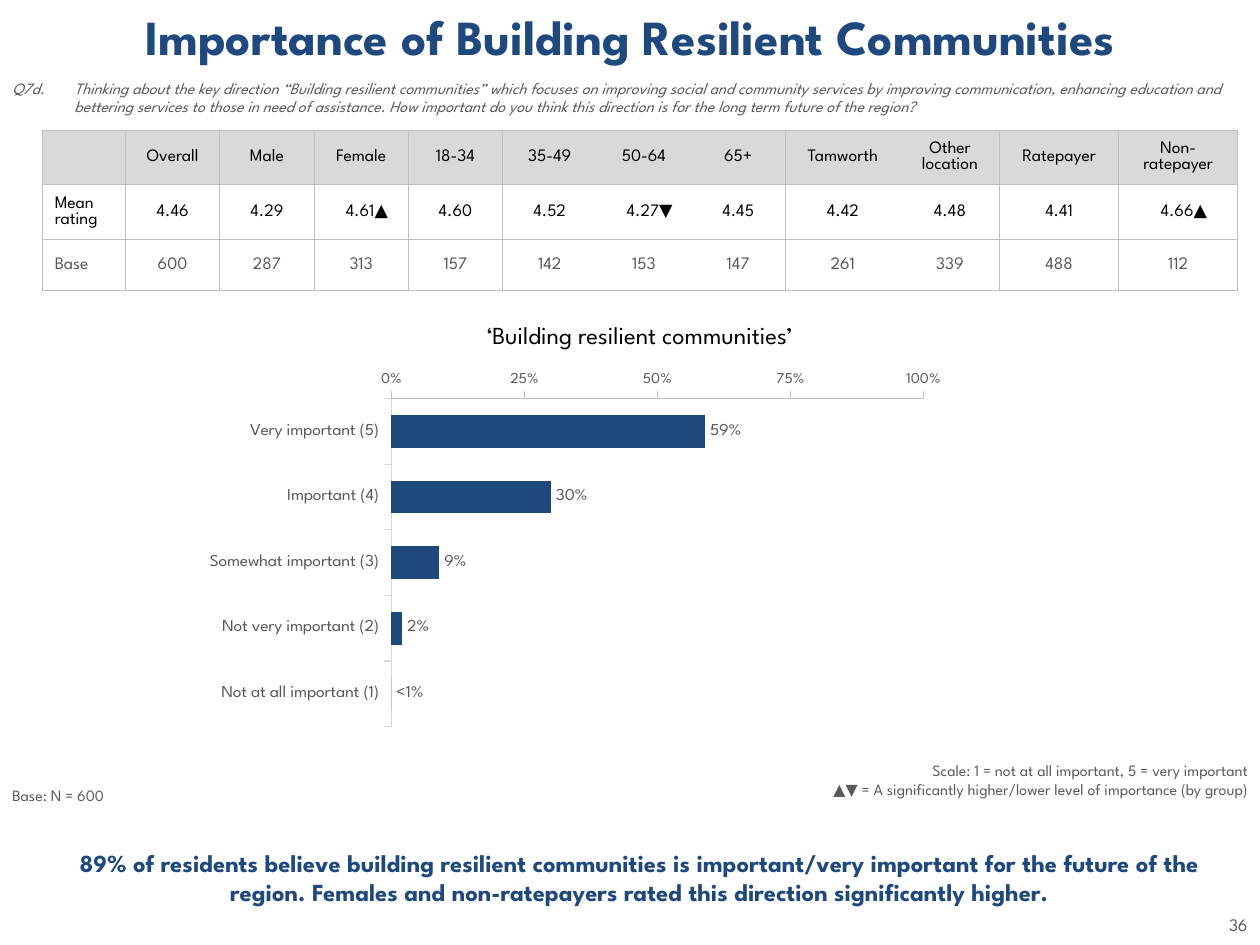
from dataclasses import dataclass
from pptx import Presentation, util as u
from pptx.chart.data import CategoryChartData
from pptx.dml.color import RGBColor
from pptx.enum import chart as ch, text as tx
from pptx.oxml import parse_xml
from pptx.oxml.ns import nsdecls
from lxml import etree

Cm, Pt = u.Cm, u.Pt
LEFT, MID, RIGHT = tx.PP_ALIGN.LEFT, tx.PP_ALIGN.CENTER, tx.PP_ALIGN.RIGHT


@dataclass(frozen=True)
class Theme:
    """Font, colours and type sizes of the slide."""
    face: str = "League Spartan"
    navy: str = "1F497D"
    grey: str = "595959"
    black: str = "000000"
    head: str = "D9D9D9"
    rule: str = "BFBFBF"
    title: int = 28
    lead: int = 14
    body: int = 10
    note: int = 9


T = Theme()
HEADS = ["", "Overall", "Male", "Female", "18-34", "35-49", "50-64", "65+",
         "Tamworth", "Other location", "Ratepayer", "Non-ratepayer"]
MEANS = ["Mean rating", "4.46", "4.29", "4.61▲", "4.60", "4.52", "4.27▼", "4.45",
         "4.42", "4.48", "4.41", "4.66▲"]
BASES = ["Base", "600", "287", "313", "157", "142", "153", "147",
         "261", "339", "488", "112"]
WIDTHS = [1.68] + [1.9] * 7 + [2.32, 2.0, 2.4, 2.4]
HEIGHTS = [1.09, 1.11, 1.03]
OPEN = {5, 6, 8}
SCORES = {"Very important (5)": 0.59, "Important (4)": 0.3,
          "Somewhat important (3)": 0.09, "Not very important (2)": 0.02,
          "Not at all important (1)": 0}
ASK = ("Q7d.\tThinking about the key direction “Building resilient communities” which "
       "focuses on improving social and community services by improving communication, "
       "enhancing education and bettering services to those in need of assistance. How "
       "important do you think this direction is for the long term future of the region?")
CLAIM = ("89% of residents believe building resilient communities is important/very "
         "important for the future of the region. Females and non-ratepayers rated this "
         "direction significantly higher.")


def style(font, size, color, bold=False, italic=False):
    """Give a font the theme face with a size and colour."""
    font.name, font.size = T.face, Pt(size)
    font.bold, font.italic = bold, italic
    font.color.rgb = RGBColor.from_string(color)


def write(frame, words, size, color, align=LEFT, gap=0, bold=False, italic=False):
    """Fill a text frame and format its paragraphs and runs."""
    frame.text = words
    frame.word_wrap = True
    for para in frame.paragraphs:
        para.alignment, para.space_before = align, Pt(gap)
        for run in para.runs:
            style(run.font, size, color, bold, italic)


def label(slide, box, words, size, color, anchor=tx.MSO_ANCHOR.TOP, **look):
    """Add a text box and return its frame."""
    frame = slide.shapes.add_textbox(*map(Cm, box)).text_frame
    write(frame, words, size, color, **look)
    frame.vertical_anchor = anchor
    return frame


def heading(slide, box):
    """Place the slide title."""
    title = slide.shapes.title
    title.left, title.top, title.width, title.height = map(Cm, box)
    frame = title.text_frame
    write(frame, "Importance of Building Resilient Communities", T.title, T.navy,
          align=MID, gap=5.6, bold=True)
    frame.vertical_anchor = tx.MSO_ANCHOR.TOP
    frame.auto_size = tx.MSO_AUTO_SIZE.NONE


def question(slide, box):
    """Place the survey question with a hanging number."""
    frame = label(slide, box, ASK, T.note, T.grey, tx.MSO_ANCHOR.MIDDLE,
                  gap=1.8, italic=True)
    props = frame.paragraphs[0]._p.get_or_add_pPr()
    props.set("marL", str(Cm(1.25)))
    props.set("indent", str(-Cm(1.25)))


def border(cell, col):
    """Rule a cell, leaving the sides inside a column group open."""
    shown = {"L": col - 1 not in OPEN, "R": col not in OPEN, "T": True, "B": True}
    for side, on in shown.items():
        fill = (f'<a:solidFill><a:srgbClr val="{T.rule}"/></a:solidFill>'
                if on else "<a:noFill/>")
        cell._tc.get_or_add_tcPr().append(parse_xml(
            f'<a:ln{side} {nsdecls("a")} w="{Pt(0.5)}">{fill}</a:ln{side}>'))


def ratings(slide, box):
    """Draw the table of mean ratings by group."""
    rows = [HEADS, MEANS, BASES]
    frame = slide.shapes.add_table(len(rows), len(HEADS), *map(Cm, box))
    table = frame.table
    table.first_row = table.horz_banding = False
    for col, width in zip(table.columns, WIDTHS):
        col.width = Cm(width)
    for r, words in enumerate(rows):
        table.rows[r].height = Cm(HEIGHTS[r])
        for c, word in enumerate(words):
            cell = table.cell(r, c)
            write(cell.text_frame, word, T.body, T.grey if r == 2 else T.black,
                  align=MID if c else LEFT)
            cell.vertical_anchor = tx.MSO_ANCHOR.MIDDLE
            if r == 1 and c:
                cell.margin_left = cell.margin_right = cell.margin_top = Cm(0.02)
                cell.margin_bottom = 0
            if word.endswith(("▲", "▼")):
                props = cell.text_frame.paragraphs[0]._p.get_or_add_pPr()
                props.set("marL", str(Cm(0.23)))
            border(cell, c)
            if r == 0:
                cell.fill.solid()
                cell.fill.fore_color.rgb = RGBColor.from_string(T.head)
            else:
                cell.fill.background()


def axis_look(axis, size, color):
    """Format the line, ticks and labels of an axis."""
    axis.has_major_gridlines = False
    axis.major_tick_mark = ch.XL_TICK_MARK.OUTSIDE
    axis.minor_tick_mark = ch.XL_TICK_MARK.NONE
    axis.format.line.width = Pt(0.75)
    axis.format.line.color.rgb = RGBColor.from_string(color)
    style(axis.tick_labels.font, size, T.grey)


def bars(slide, box):
    """Draw the bar chart of importance scores."""
    data = CategoryChartData(number_format="0%")
    data.categories = list(SCORES)
    data.add_series("Series 1", list(SCORES.values()))
    chart = slide.shapes.add_chart(ch.XL_CHART_TYPE.BAR_CLUSTERED,
                                   *map(Cm, box), data).chart
    chart.has_legend = chart.has_title = False
    style(chart.font, T.body, T.black)
    cats, vals = chart.category_axis, chart.value_axis
    axis_look(cats, T.body, T.head)
    axis_look(vals, T.note, T.rule)
    cats.reverse_order = True
    cats.crosses = ch.XL_AXIS_CROSSES.MAXIMUM
    vals.minimum_scale, vals.maximum_scale, vals.major_unit = 0, 1, 0.25
    vals.tick_labels.number_format = "0%"
    vals.tick_labels.number_format_is_linked = False

    plot = chart.plots[0]
    plot.gap_width, plot.vary_by_categories = 100, False
    series = plot.series[0]
    series.format.fill.solid()
    series.format.fill.fore_color.rgb = RGBColor.from_string(T.navy)
    tags = series.data_labels
    tags.show_value = True
    tags.number_format, tags.number_format_is_linked = "0%", False
    tags.position = ch.XL_LABEL_POSITION.OUTSIDE_END
    style(tags.font, T.body, T.grey)
    last = series.points[len(SCORES) - 1].data_label
    last.text_frame.text = "<1%"
    style(last.text_frame.paragraphs[0].runs[0].font, T.body, T.grey)
    last.position = ch.XL_LABEL_POSITION.OUTSIDE_END

    area = chart._chartSpace.chart.plotArea
    for old in area.findall("c:layout", area.nsmap):
        area.remove(old)
    spots = {"layoutTarget": "inner", "xMode": "edge", "yMode": "edge",
             "x": 0.26, "y": 0.02, "w": 0.7, "h": 0.89}
    layout = parse_xml(f'<c:layout {nsdecls("c")}><c:manualLayout/></c:layout>')
    for name, val in spots.items():
        etree.SubElement(layout[0], f"{{{area.nsmap['c']}}}{name}").set("val", str(val))
    area.insert(0, layout)


def notes(slide, box):
    """Place the base, the scale key and the page number."""
    x, y, w, h = box
    label(slide, (x, y + 0.5, 10, 0.6), "Base: N = 600", T.note, T.grey, gap=1.8)
    label(slide, (x + w - 11.1, y, 11.1, 1.02),
          "Scale: 1 = not at all important, 5 = very important\n"
          "▲▼ = A significantly higher/lower level of importance (by group)",
          T.note, T.grey, align=RIGHT)
    label(slide, (x + w - 1.1, y + h - 0.74, 1.1, 0.68), "36", T.body, T.grey,
          align=RIGHT)


def main():
    """Build and save the slide."""
    deck = Presentation()
    deck.slide_width, deck.slide_height = Cm(25.4), Cm(19.05)
    slide = deck.slides.add_slide(deck.slide_layouts[5])
    heading(slide, (0, 0, 25.4, 1.4))
    question(slide, (0, 1.45, 25.4, 1.02))
    ratings(slide, (0.85, 2.62, 24.1, 3.23))
    label(slide, (5.9, 6.32, 14, 0.86), "‘Building resilient communities’",
          T.lead, T.black, align=MID)
    bars(slide, (3.91, 7.52, 15.32, 7.8))
    notes(slide, (0, 15.21, 25.4, 3.84))
    label(slide, (1.3, 16.33, 23.2, 2.72), CLAIM, T.lead, T.navy,
          tx.MSO_ANCHOR.MIDDLE, align=MID, gap=2.8, bold=True)
    deck.save("out.pptx")


if __name__ == "__main__":
    main()
